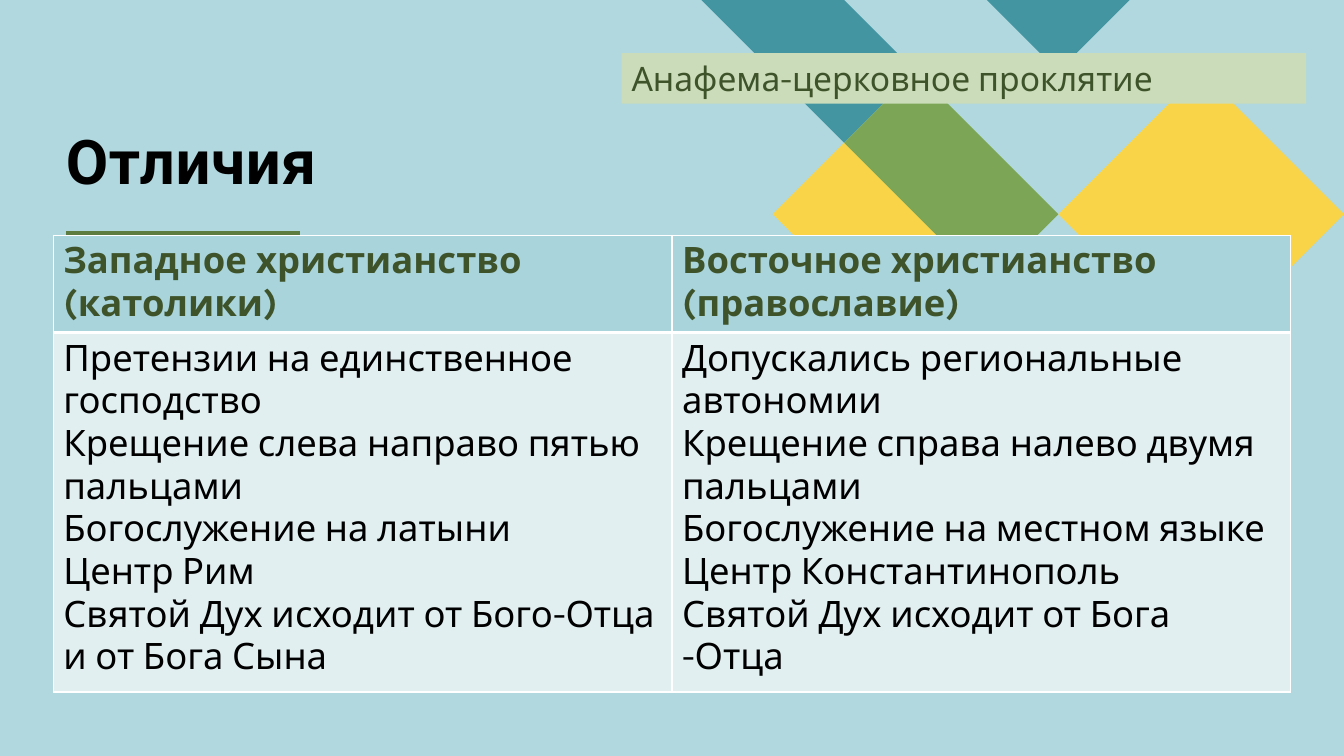
from lxml import etree
from pptx import Presentation
from pptx.dml.color import RGBColor
from pptx.enum.shapes import MSO_CONNECTOR, MSO_SHAPE
from pptx.enum.text import MSO_ANCHOR, PP_ALIGN
from pptx.oxml.ns import qn
from pptx.util import Pt

LINE = MSO_CONNECTOR.STRAIGHT
RECT = MSO_SHAPE.RECTANGLE
BOTTOM, MIDDLE = MSO_ANCHOR.BOTTOM, MSO_ANCHOR.MIDDLE
LEFT = PP_ALIGN.LEFT

SKY = RGBColor(0xB0, 0xD8, 0xDE)
TEAL = RGBColor(0x44, 0x95, 0xA2)
YELLOW = RGBColor(0xF9, 0xD4, 0x48)
GREEN = RGBColor(0x7C, 0xA6, 0x55)
OLIVE = RGBColor(0x5D, 0x7D, 0x40)
FOREST = RGBColor(0x3E, 0x53, 0x2A)
SAGE = RGBColor(0xCB, 0xDC, 0xBA)
HEAD = RGBColor(0xA9, 0xD4, 0xDB)
BODY = RGBColor(0xE2, 0xEF, 0xF1)
BLACK = RGBColor(0, 0, 0)

GRID_LEFT, STEP = 501, 51
BANDS = [
    (TEAL, [(0, 0), (2, 0), (3, 1), (2, 2)]),
    (TEAL, [(6, 4), (7, 3), (8, 4), (7, 5)]),
    (YELLOW, [(2, 2), (1, 3), (3, 5), (4, 4)]),
    (TEAL, [(4, 0), (6, 0), (5, 1)]),
    (GREEN, [(3, 1), (2, 2), (4, 4), (5, 3)]),
    (YELLOW, [(9, 3), (7, 1), (5, 3), (7, 5)]),
]
WEST = [
    "Претензии на единственное господство",
    "Крещение слева направо пятью пальцами",
    "Богослужение на латыни",
    "Центр Рим",
    "Святой Дух исходит от Бого-Отца и от Бога Сына",
]
EAST = [
    "Допускались региональные автономии",
    "Крещение справа налево двумя пальцами",
    "Богослужение на местном языке",
    "Центр Константинополь",
    "Святой Дух исходит от Бога -Отца",
]
ROWS = [
    [["Западное христианство (католики)"],
     ["Восточное христианство (православие)"]],
    [WEST, EAST],
]


def write(frame, lines, font, size, color, bold=False):
    """Fill a text frame with left-aligned paragraphs in one style."""
    frame.word_wrap = True
    frame.text = "\n".join(lines)
    for para in frame.paragraphs:
        para.alignment = LEFT
        for run in para.runs:
            run.font.name = font
            run.font.size = Pt(size)
            run.font.bold = bold
            run.font.color.rgb = color


def add_band(slide, color, points):
    """Draw a polygon whose corners lie on the diagonal grid."""
    spots = [(Pt(GRID_LEFT + STEP * x), Pt(STEP * y)) for x, y in points]
    form = slide.shapes.build_freeform(*spots[0])
    form.add_line_segments(spots[1:], close=True)
    band = form.convert_to_shape()
    band.shadow.inherit = False
    band.fill.solid()
    band.fill.fore_color.rgb = color
    band.line.fill.background()


def add_rule(slide):
    """Draw the thick rule below the title."""
    rule = slide.shapes.add_connector(LINE, Pt(47), Pt(169), Pt(214.5), Pt(169))
    rule.line.color.rgb = OLIVE
    rule.line.width = Pt(8)
    etree.SubElement(rule._element.spPr, qn("a:effectLst"))


def add_title(slide, text):
    """Place the slide title above the rule."""
    box = slide.shapes.add_textbox(Pt(47), Pt(15), Pt(534), Pt(125.5))
    frame = box.text_frame
    write(frame, [text], "Roboto", 44, BLACK, True)
    frame.margin_left = frame.margin_right = 0
    frame.margin_top = frame.margin_bottom = 0
    frame.vertical_anchor = BOTTOM
    para = frame.paragraphs[0]
    para.line_spacing = 0.8
    para.runs[0]._r.get_or_add_rPr().set("spc", "50")


def set_edges(cell, color, bottom):
    """Give a cell solid borders, with its own bottom width."""
    props = cell._tc.get_or_add_tcPr()
    widths = {"a:lnL": 1, "a:lnR": 1, "a:lnT": 1, "a:lnB": bottom}
    for spot, (tag, width) in enumerate(widths.items()):
        edge = etree.Element(qn(tag), w=str(Pt(width)))
        fill = etree.SubElement(edge, qn("a:solidFill"))
        etree.SubElement(fill, qn("a:srgbClr"), val=color)
        props.insert(spot, edge)


def add_grid(slide):
    """Build the table that compares the two churches."""
    frame = slide.shapes.add_table(2, 2, Pt(38), Pt(168), Pt(884), Pt(319))
    table = frame.table
    styles = [(68, HEAD, FOREST, True, 3), (251, BODY, BLACK, False, 1)]
    for row, texts, style in zip(table.rows, ROWS, styles):
        height, fill, color, bold, bottom = style
        row.height = Pt(height)
        for cell, lines in zip(row.cells, texts):
            cell.fill.solid()
            cell.fill.fore_color.rgb = fill
            write(cell.text_frame, lines, "Karla", 26, color, bold)
            set_edges(cell, "FFFFFF", bottom)


def add_label(slide, text):
    """Add the filled label with the definition."""
    label = slide.shapes.add_shape(RECT, Pt(444), Pt(38), Pt(489), Pt(36))
    label.shadow.inherit = False
    label.fill.solid()
    label.fill.fore_color.rgb = SAGE
    label.line.fill.background()
    write(label.text_frame, [text], "Karla", 24, FOREST)
    label.text_frame.vertical_anchor = MIDDLE


def main():
    """Build and save the slide."""
    deck = Presentation()
    deck.slide_width, deck.slide_height = Pt(960), Pt(540)
    slide = deck.slides.add_slide(deck.slide_layouts[6])
    slide.background.fill.solid()
    slide.background.fill.fore_color.rgb = SKY
    for color, points in BANDS:
        add_band(slide, color, points)
    add_rule(slide)
    add_title(slide, "Отличия")
    add_grid(slide)
    add_label(slide, "Анафема-церковное проклятие")
    deck.save("out.pptx")


if __name__ == "__main__":
    main()
